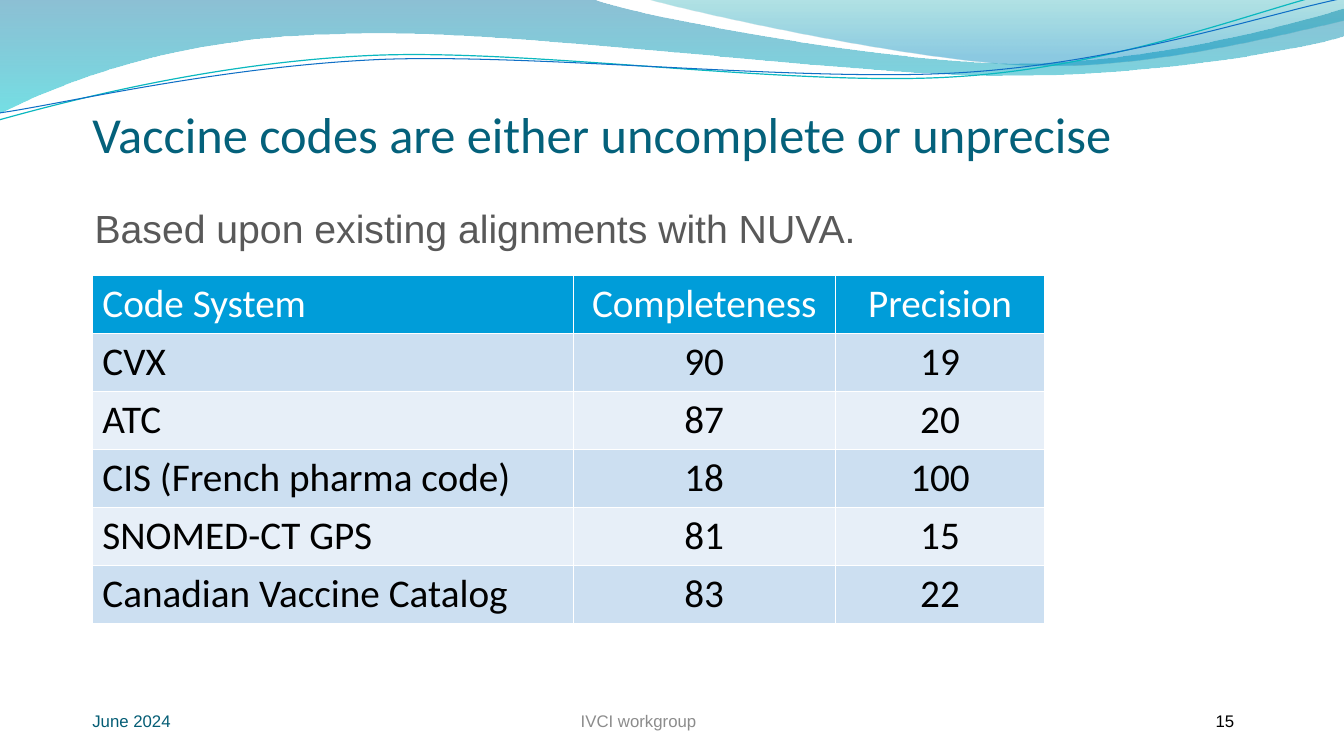
from math import cos, radians, sin
from lxml.etree import SubElement
from pptx import Presentation
from pptx.dml.color import RGBColor as RGB
from pptx.enum.text import MSO_ANCHOR as ANCHOR, MSO_AUTO_SIZE as FIT, PP_ALIGN as ALIGN
from pptx.oxml.ns import qn
from pptx.util import Inches, Pt

WIDTH, HEIGHT = 40 / 3, 7.5
LEFT = 11 / 12
C = {
    "white": "FFFFFF", "black": "000000", "title": "04617B", "body": "595959",
    "footer": "8C8C8C", "date": "045D75", "header": "009DD9",
    "odd": "CCDFF1", "even": "E7EFF8",
    "deep": "0074A1", "cyan": "00C6CF", "teal": "00A1A9", "blue": "008BBF",
    "teal_line": "0AB8BF", "blue_line": "0F6FC6",
}
COLUMNS = [4.77, 2.6, 2.08]
ROWS = [
    ("Code System", "Completeness", "Precision"),
    ("CVX", "90", "19"),
    ("ATC", "87", "20"),
    ("CIS (French pharma code)", "18", "100"),
    ("SNOMED-CT GPS", "81", "15"),
    ("Canadian Vaccine Catalog", "83", "22"),
]
BANDS = [
    ([(0, 0), (5.87, -0.01), (6.34, 0.17, 8.85, 0.63, 10.11, 0.63),
      (11.38, 0.63, 12.78, 0.26, 13.33, 0.09), (13.35, 0.36),
      (13.11, 0.44, 11.6, 0.76, 9.94, 0.75), (8.29, 0.75, 5.09, 0.28, 3.43, 0.34),
      (1.72, 0.36, 0.61, 0.83, -0.01, 1.13), (0, 0)],
     [(0, "deep", 45), (1, "cyan", 55)]),
    ([(6.39, -0.01), (6.79, 0.11, 9.09, 0.62, 10.25, 0.65),
      (11.41, 0.69, 12.82, 0.32, 13.33, 0.21), (13.33, 0), (6.39, -0.01)],
     [(0, "teal", 30), (0.8, "blue", 45)]),
]
TILT = -2.7
STRANDS = [
    ([(-0.01, 1.19), (0.64, 1.01, 2.11, 0.62, 3.69, 0.55),
      (5.27, 0.48, 7.9, 0.87, 9.5, 0.76), (11.1, 0.66, 12.52, 0.08, 13.31, -0.1)],
     (6.65, 0.575), "teal_line", 0.85),
    ([(0, 1.12), (0.63, 1.03, 2.18, 0.66, 3.78, 0.59),
      (5.37, 0.53, 7.96, 0.82, 9.55, 0.72), (11.15, 0.62, 12.55, 0.14, 13.34, -0.02)],
     (6.67, 0.59), "blue_line", 0.75),
]


def rgb(name):
    return RGB.from_string(C[name])


def write(tf, text, size=12, font="Arial", color="black", align=ALIGN.LEFT,
          anchor=ANCHOR.TOP, insets=None, wrap=True, fit=FIT.NONE):
    tf.word_wrap = wrap
    tf.auto_size = fit
    tf.vertical_anchor = anchor
    if insets:
        tf.margin_left, tf.margin_top, tf.margin_right, tf.margin_bottom = map(Inches, insets)
    p = tf.paragraphs[0]
    p.alignment = align
    r = p.add_run()
    r.text = text
    r.font.size, r.font.name, r.font.color.rgb = Pt(size), font, rgb(color)
    return p


def text_box(slide, box, text, **style):
    s = slide.shapes.add_textbox(*map(Inches, box))
    return write(s.text_frame, text, **style)


def level_out(segment, center):
    (cx, cy), a = center, radians(-TILT)
    level = []
    for x, y in zip(segment[::2], segment[1::2]):
        dx, dy = x - cx, y - cy
        level += [cx + dx * cos(a) - dy * sin(a), cy + dx * sin(a) + dy * cos(a)]
    return level


def curved_shape(shapes, outline, close):
    start, *segments = outline
    builder = shapes.build_freeform(*map(Inches, start), scale=1)
    points = [(Inches(x), Inches(y)) for seg in segments for x, y in zip(seg[::2], seg[1::2])]
    builder.add_line_segments(points, close=close)
    s = builder.convert_to_shape()
    s.shadow.inherit = False
    lines = iter(list(s._element.iter(qn("a:lnTo"))))
    for segment in segments:
        line = next(lines)
        if len(segment) == 6:
            curve = line.makeelement(qn("a:cubicBezTo"), {})
            line.addprevious(curve)
            for part in (line, next(lines), next(lines)):
                curve.append(part[0])
                part.getparent().remove(part)
    return s


def add_waves(slide):
    for outline, stops in BANDS:
        s = curved_shape(slide.shapes, outline, True)
        s.line.fill.background()
        s.fill.gradient()
        s.fill.gradient_angle = 270
        for stop, (position, color, _) in zip(s.fill.gradient_stops, stops):
            stop.position = position
            stop.color.rgb = rgb(color)
        for clr, (_, _, opacity) in zip(s._element.spPr.iter(qn("a:srgbClr")), stops):
            SubElement(clr, qn("a:alpha"), val=str(opacity * 1000))
    group = slide.shapes.add_group_shape()
    for outline, center, color, width in STRANDS:
        s = curved_shape(group.shapes, [level_out(seg, center) for seg in outline], False)
        s.rotation = TILT
        s.fill.background()
        s.line.color.rgb = rgb(color)
        s.line.width = Pt(width)


def add_title(slide, box, text):
    s = slide.shapes.title
    s.left, s.top, s.width, s.height = map(Inches, box)
    write(s.text_frame, text, size=36, font="Calibri", color="title",
          anchor=ANCHOR.BOTTOM, insets=(0, 0.05, 0, 0))


def set_borders(cell):
    tc_pr = cell._tc.get_or_add_tcPr()
    for i, side in enumerate(("lnL", "lnR", "lnT", "lnB")):
        ln = tc_pr.makeelement(qn("a:" + side), {"w": str(Pt(1))})
        fill = SubElement(ln, qn("a:solidFill"))
        SubElement(fill, qn("a:srgbClr"), val=C["white"])
        tc_pr.insert(i, ln)


def add_codes_table(slide, left, top, height):
    frame = slide.shapes.add_table(len(ROWS), len(COLUMNS), Inches(left), Inches(top),
                                   Inches(sum(COLUMNS)), Inches(height))
    table = frame.table
    for column, width in zip(table.columns, COLUMNS):
        column.width = Inches(width)
    for row in table.rows:
        row.height = Inches(0.41)
    frame.height = Inches(height)
    for i, values in enumerate(ROWS):
        fill = "header" if i == 0 else "odd" if i % 2 else "even"
        for j, value in enumerate(values):
            cell = table.cell(i, j)
            cell.fill.solid()
            cell.fill.fore_color.rgb = rgb(fill)
            p = cell.text_frame.paragraphs[0]
            p.alignment = ALIGN.CENTER if j else ALIGN.LEFT
            r = p.add_run()
            r.text = value
            r.font.size, r.font.name, r.font.bold = Pt(28), "Calibri", False
            r.font.color.rgb = rgb("black" if i else "white")
            set_borders(cell)


def add_footer(slide, top, height):
    flush = dict(anchor=ANCHOR.MIDDLE, insets=(0, 0, 0, 0))
    text_box(slide, (3.89, top, 4.89, height), "IVCI workgroup", color="footer",
             align=ALIGN.CENTER, anchor=ANCHOR.MIDDLE)
    text_box(slide, (LEFT, top, 3, height), "June 2024", color="date", **flush)
    p = text_box(slide, (11.56, top, 1.11, height), "15", **flush)
    p.level = 1
    p._p.get_or_add_pPr().set("marL", str(Inches(0.5)))


def main():
    prs = Presentation()
    prs.slide_width, prs.slide_height = Inches(WIDTH), Inches(HEIGHT)
    slide = prs.slides.add_slide(prs.slide_layouts[5])
    add_waves(slide)
    add_title(slide, (LEFT, 0.77, 11.75, 0.85),
              "Vaccine codes are either uncomplete or unprecise")
    add_codes_table(slide, LEFT, 2.73, 3.4)
    text_box(slide, (0.84, 1.98, 7.84, 0.57), "Based upon existing alignments with NUVA.",
             size=28, color="body", wrap=False, fit=FIT.SHAPE_TO_FIT_TEXT)
    add_footer(slide, 6.95, 0.4)
    prs.save("out.pptx")


if __name__ == "__main__":
    main()
